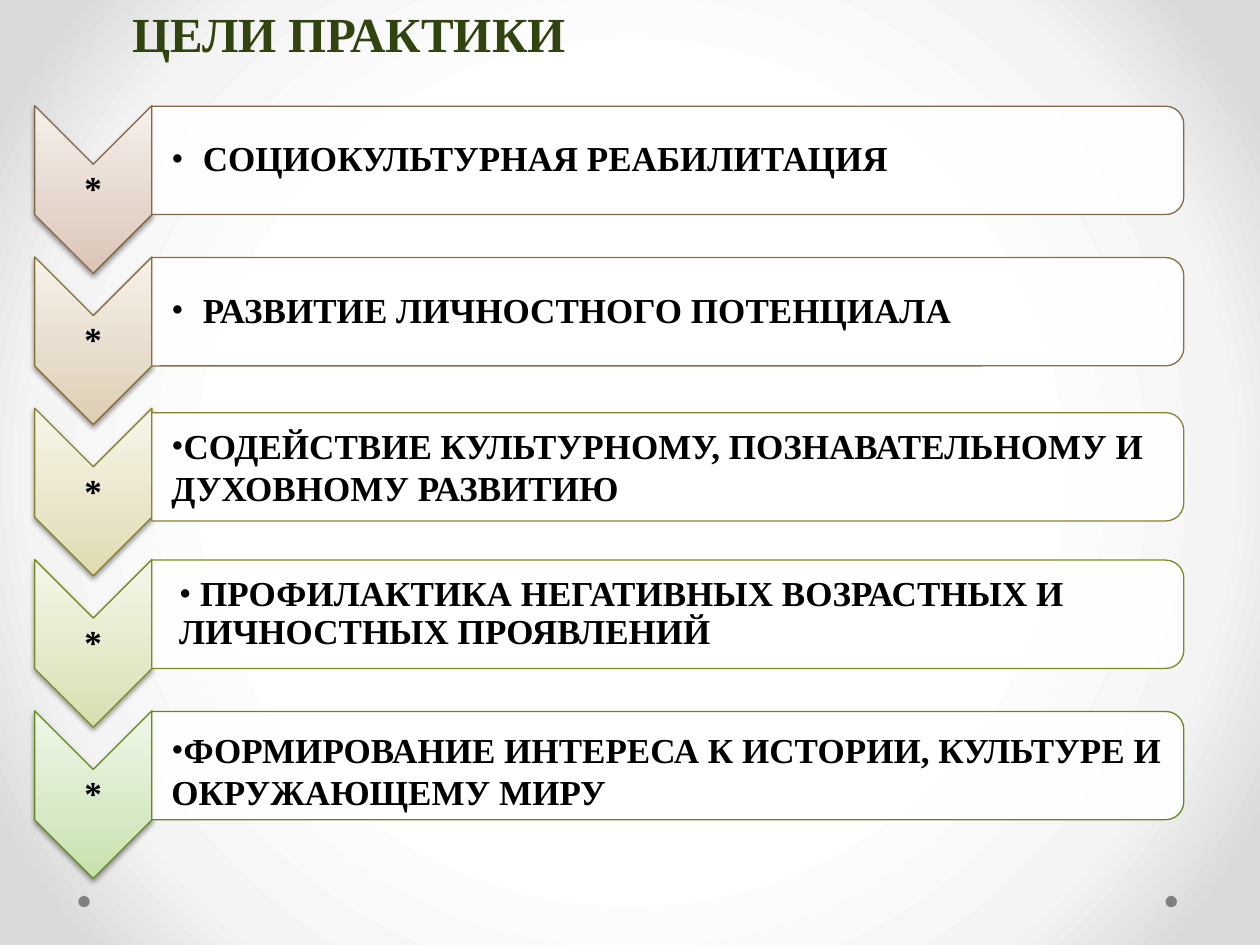
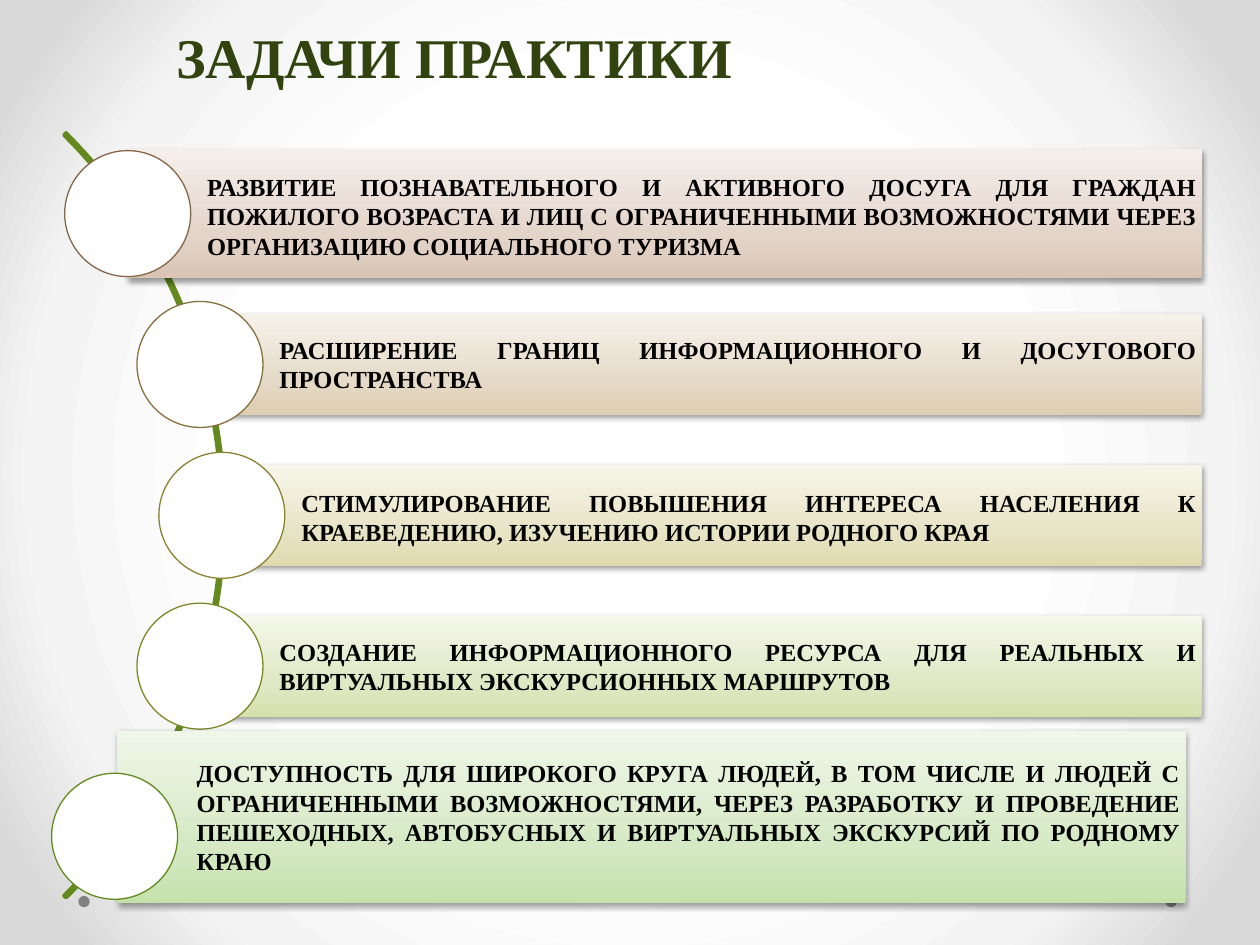
"""Build two slides that present the goals and the tasks of the practice."""
from dataclasses import dataclass

from lxml import etree
from pptx import Presentation
from pptx.dml.color import RGBColor
from pptx.enum.shapes import MSO_SHAPE
from pptx.enum.text import MSO_ANCHOR, PP_ALIGN
from pptx.oxml import parse_xml
from pptx.oxml.ns import nsdecls, qn
from pptx.util import Pt

CHEVRON = MSO_SHAPE.CHEVRON
PANEL = MSO_SHAPE.ROUND_2_SAME_RECTANGLE
ARC = MSO_SHAPE.BLOCK_ARC
OVAL = MSO_SHAPE.OVAL
RECTANGLE = MSO_SHAPE.RECTANGLE
MIDDLE = MSO_ANCHOR.MIDDLE
TOP = MSO_ANCHOR.TOP
LEFT = PP_ALIGN.LEFT
CENTER = PP_ALIGN.CENTER
JUSTIFY = PP_ALIGN.JUSTIFY

FONT = "Times New Roman"
COLORS = {
    "title": "314410",
    "text": "000000",
    "white": "FFFFFF",
    "dot": "808080",
    "arc": "63891F",
}
BACKGROUND_STOPS = ((50, "FFFFFF"), (76, "F4F4F4"), (92, "DADADA"))
RADIAL = ('<a:path path="circle"><a:fillToRect l="50000" t="50000" '
          'r="50000" b="50000"/></a:path>')
UPWARD = '<a:lin ang="16200000" scaled="0"/>'


@dataclass(frozen=True)
class Box:
    left: float
    top: float
    width: float
    height: float

    @classmethod
    def around(cls, x: float, y: float, width: float, height: float) -> "Box":
        return cls(x - width / 2, y - height / 2, width, height)

    def lengths(self) -> tuple:
        return Pt(self.left), Pt(self.top), Pt(self.width), Pt(self.height)


@dataclass(frozen=True)
class TextStyle:
    size: float
    color: str = "text"
    align: PP_ALIGN = LEFT
    anchor: MSO_ANCHOR = MIDDLE
    margins: tuple = (0.7, 0.7, 0.7, 0.7)
    line_spacing: float = 1.0


@dataclass(frozen=True)
class Tone:
    line: str
    dark: str
    medium: str
    light: str


@dataclass(frozen=True)
class Goal:
    text: str
    indent: float = 0
    hanging: float = 0
    line_spacing: float = 1.0
    panel_shift: float = 0
    text_shift: float = 0


@dataclass(frozen=True)
class Task:
    text: str
    left: float
    height: float = 57.6
    right: float = 686.7
    top_margin: float = 3
    marker_shift: tuple = (0, 0)


TONES = (
    Tone("846648", "DAC4B4", "E4D5CB", "F5EFEB"),
    Tone("86713D", "DDCDB1", "E6DBC9", "F6F1EA"),
    Tone("888232", "DFDAAE", "E8E4C7", "F7F5E9"),
    Tone("7B8928", "D5E0AD", "E1E8C6", "F4F7E9"),
    Tone("63891F", "C5E1AB", "D6E9C5", "EFF7E9"),
)
GOALS = (
    Goal("СОЦИОКУЛЬТУРНАЯ РЕАБИЛИТАЦИЯ", 18, -18, 0.9),
    Goal("РАЗВИТИЕ ЛИЧНОСТНОГО ПОТЕНЦИАЛА", 18, -18, 0.9),
    Goal("СОДЕЙСТВИЕ КУЛЬТУРНОМУ, ПОЗНАВАТЕЛЬНОМУ И ДУХОВНОМУ РАЗВИТИЮ",
         panel_shift=2.2),
    Goal(" ПРОФИЛАКТИКА НЕГАТИВНЫХ ВОЗРАСТНЫХ И ЛИЧНОСТНЫХ ПРОЯВЛЕНИЙ",
         4.5, 0, 0.9),
    Goal("ФОРМИРОВАНИЕ ИНТЕРЕСА К ИСТОРИИ, КУЛЬТУРЕ И ОКРУЖАЮЩЕМУ МИРУ",
         text_shift=3),
)
TASKS = (
    Task("РАЗВИТИЕ ПОЗНАВАТЕЛЬНОГО И АКТИВНОГО ДОСУГА ДЛЯ ГРАЖДАН ПОЖИЛОГО "
         "ВОЗРАСТА И ЛИЦ С ОГРАНИЧЕННЫМИ ВОЗМОЖНОСТЯМИ ЧЕРЕЗ ОРГАНИЗАЦИЮ "
         "СОЦИАЛЬНОГО ТУРИЗМА", 73, 74, top_margin=5.5),
    Task("РАСШИРЕНИЕ ГРАНИЦ ИНФОРМАЦИОННОГО И ДОСУГОВОГО ПРОСТРАНСТВА", 114.3),
    Task("СТИМУЛИРОВАНИЕ ПОВЫШЕНИЯ ИНТЕРЕСА НАСЕЛЕНИЯ К КРАЕВЕДЕНИЮ, "
         "ИЗУЧЕНИЮ ИСТОРИИ РОДНОГО КРАЯ", 126.8, top_margin=5.5),
    Task("СОЗДАНИЕ ИНФОРМАЦИОННОГО РЕСУРСА ДЛЯ РЕАЛЬНЫХ И ВИРТУАЛЬНЫХ "
         "ЭКСКУРСИОННЫХ МАРШРУТОВ", 114.3),
    Task("ДОСТУПНОСТЬ ДЛЯ ШИРОКОГО КРУГА ЛЮДЕЙ, В ТОМ ЧИСЛЕ И ЛЮДЕЙ С "
         "ОГРАНИЧЕННЫМИ ВОЗМОЖНОСТЯМИ, ЧЕРЕЗ РАЗРАБОТКУ И ПРОВЕДЕНИЕ "
         "ПЕШЕХОДНЫХ, АВТОБУСНЫХ И ВИРТУАЛЬНЫХ ЭКСКУРСИЙ ПО РОДНОМУ КРАЮ",
         67, 98.6, 677.5, marker_shift=(-1.5, 11)),
)


def set_gradient(fill, owner, stops: tuple, direction: str) -> None:
    fill.gradient()
    old = owner.find(f".//{qn('a:gradFill')}")
    stops_xml = "".join(
        f'<a:gs pos="{position * 1000}"><a:srgbClr val="{color}"/></a:gs>'
        for position, color in stops)
    new = parse_xml(f'<a:gradFill {nsdecls("a")} rotWithShape="0">'
                    f'<a:gsLst>{stops_xml}</a:gsLst>{direction}</a:gradFill>')
    old.getparent().replace(old, new)


def add_figure(slide, kind, box: Box, fill: str = "", line: str = "",
               line_width: float = 0.75, rotation: float = 0):
    shape = slide.shapes.add_shape(kind, *box.lengths())
    shape.shadow.inherit = False
    shape.rotation = rotation
    if fill:
        shape.fill.solid()
        shape.fill.fore_color.rgb = RGBColor.from_string(fill)
    else:
        shape.fill.background()
    if line:
        shape.line.color.rgb = RGBColor.from_string(line)
        shape.line.width = Pt(line_width)
    else:
        shape.line.fill.background()
    return shape


def add_toned_figure(slide, kind, box: Box, tone: Tone, line: str = "",
                     rotation: float = 0):
    shape = add_figure(slide, kind, box, line=line, rotation=rotation)
    properties = shape._element.spPr
    stops = ((0, tone.dark), (35, tone.medium), (100, tone.light))
    set_gradient(shape.fill, properties, stops, UPWARD)
    shadow = etree.SubElement(
        properties.find(qn("a:effectLst")), qn("a:outerShdw"),
        blurRad=str(Pt(3.1)), dist=str(Pt(1.6)), dir="5400000",
        rotWithShape="0")
    color = etree.SubElement(shadow, qn("a:srgbClr"), val=COLORS["text"])
    etree.SubElement(color, qn("a:alpha"), val="38000")
    return shape


def write_text(shape, text: str, style: TextStyle):
    frame = shape.text_frame
    frame.word_wrap = True
    frame.vertical_anchor = style.anchor
    (frame.margin_left, frame.margin_top,
     frame.margin_right, frame.margin_bottom) = map(Pt, style.margins)
    frame.text = text
    paragraph = frame.paragraphs[0]
    paragraph.alignment = style.align
    paragraph.line_spacing = style.line_spacing
    for run in paragraph.runs:
        run.font.name = FONT
        run.font.size = Pt(style.size)
        run.font.bold = True
        run.font.color.rgb = RGBColor.from_string(COLORS[style.color])
    return paragraph


def add_text(slide, box: Box, text: str, style: TextStyle):
    return write_text(slide.shapes.add_textbox(*box.lengths()), text, style)


def add_bullet(paragraph, indent: float, hanging: float) -> None:
    properties = paragraph._p.get_or_add_pPr()
    properties.set("marL", str(Pt(indent)))
    properties.set("indent", str(Pt(hanging)))
    etree.SubElement(properties, qn("a:buFont"), typeface=FONT)
    etree.SubElement(properties, qn("a:buChar"), char="•")


def add_base_slide(presentation):
    slide = presentation.slides.add_slide(presentation.slide_layouts[6])
    background = slide.background
    set_gradient(background.fill, slide._element, BACKGROUND_STOPS, RADIAL)
    for x in (669.3, 48):
        add_figure(slide, OVAL, Box.around(x, 515.2, 6.5, 6.5), COLORS["dot"])
    return slide


def add_title(slide, box: Box, text: str, size: float) -> None:
    style = TextStyle(size, "title", anchor=TOP, margins=(7.2, 3.6, 7.2, 3.6))
    add_text(slide, box, text, style)


def add_goal(slide, index: int, goal: Goal, tone: Tone) -> None:
    shift = 86.45 * index
    chevron_y = 108.3 + shift
    panel_y = 91.7 + shift + goal.panel_shift
    add_toned_figure(slide, CHEVRON, Box.around(53.3, chevron_y, 95.8, 67),
                     tone, tone.line, 90)
    add_text(slide, Box.around(53.3, chevron_y + 0.4, 67, 28.8), "*",
             TextStyle(20, align=CENTER, line_spacing=0.9))
    panel = add_figure(slide, PANEL, Box.around(381.6, panel_y, 61.9, 589.7),
                       COLORS["white"], tone.line, rotation=90)
    color = panel._element.spPr.find(f"{qn('a:solidFill')}/{qn('a:srgbClr')}")
    etree.SubElement(color, qn("a:alpha"), val="90000")
    paragraph = add_text(
        slide, Box.around(379.8, panel_y + goal.text_shift, 586.8, 56.2),
        goal.text, TextStyle(20, margins=(11.5, 0.7, 0.7, 0.7),
                             line_spacing=goal.line_spacing))
    add_bullet(paragraph, goal.indent, goal.hanging)


def add_task(slide, index: int, task: Task, tone: Tone) -> None:
    y = 122.1 + 86.2 * index
    width = task.right - task.left
    bar = add_toned_figure(
        slide, RECTANGLE,
        Box(task.left, y - task.height / 2, width, task.height), tone)
    write_text(bar, task.text, TextStyle(
        14, align=JUSTIFY, margins=(45.4, task.top_margin, 3, 3)))
    shift_x, shift_y = task.marker_shift
    add_figure(slide, OVAL,
               Box.around(task.left + shift_x, y + shift_y, 72, 72),
               COLORS["white"], tone.line)


def build_goals(presentation) -> None:
    slide = add_base_slide(presentation)
    for index, (goal, tone) in enumerate(zip(GOALS, TONES)):
        add_goal(slide, index, goal, tone)
    add_title(slide, Box(68.4, -1.4, 345.6, 41), "ЦЕЛИ ПРАКТИКИ", 28)


def build_tasks(presentation) -> None:
    slide = add_base_slide(presentation)
    arc = add_figure(slide, ARC, Box(-489.6, -14.4, 617.8, 617.8),
                     line=COLORS["arc"], line_width=2.25)
    for index, value in enumerate((189, 27, 0.0025)):
        arc.adjustments[index] = value
    for index, (task, tone) in enumerate(zip(TASKS, TONES)):
        add_task(slide, index, task, tone)
    add_title(slide, Box(93.6, 9.4, 374.4, 90), "ЗАДАЧИ ПРАКТИКИ", 32)


def main() -> None:
    presentation = Presentation()
    presentation.slide_width, presentation.slide_height = Pt(720), Pt(540)
    build_goals(presentation)
    build_tasks(presentation)
    presentation.save("out.pptx")


if __name__ == "__main__":
    main()
